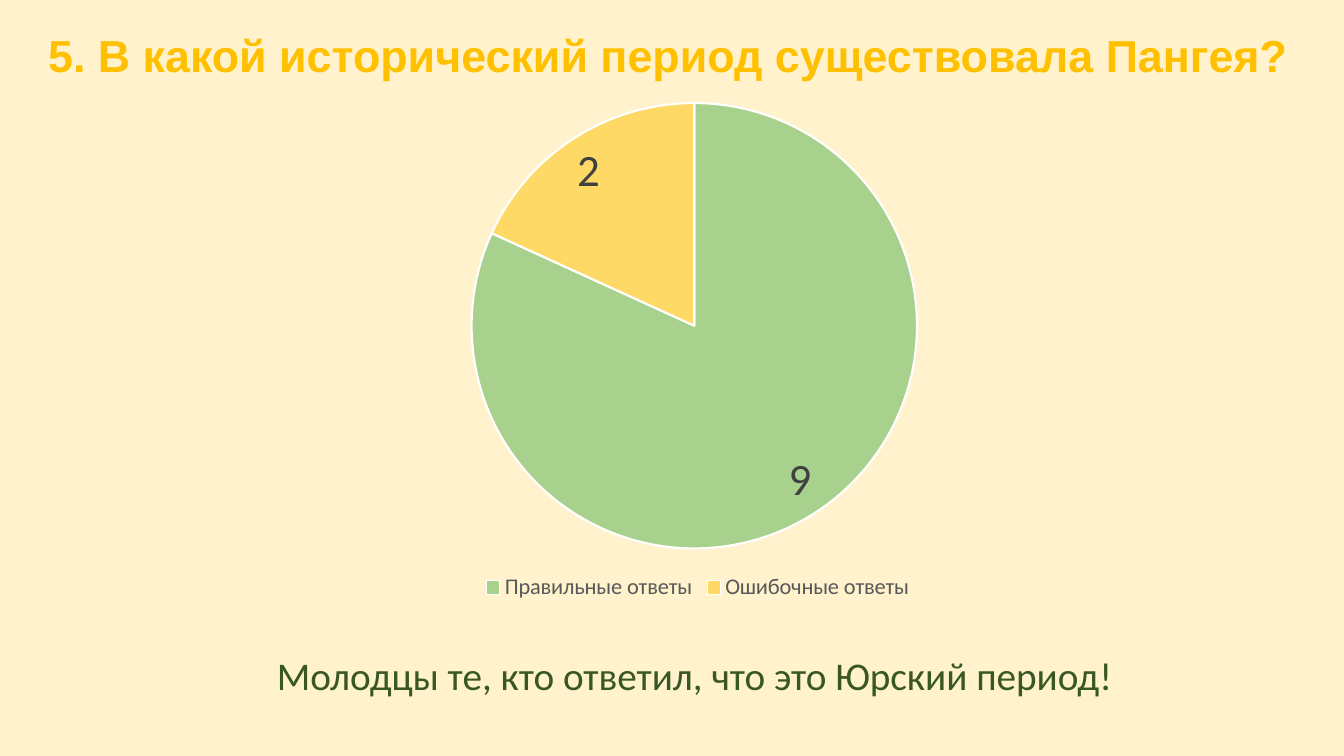
import pptx
import pptx.chart.data
import pptx.dml.color
import pptx.enum.chart
import pptx.enum.text
import pptx.oxml
import pptx.oxml.ns
import pptx.util

Pt = pptx.util.Pt


def color(hex_string):
    return pptx.dml.color.RGBColor.from_string(hex_string)


class Deck:
    BACKGROUND = "FFF2CC"
    TITLE = "FFC000"
    NOTE = "385723"
    LABEL = "404040"
    LEGEND = "595959"
    BORDER = "FFFFFF"
    HEAD_FONT = "Arial"
    BODY_FONT = "Calibri"

    def __init__(self, width, height):
        self.prs = pptx.Presentation()
        self.prs.slide_width, self.prs.slide_height = Pt(width), Pt(height)

    def add_slide(self):
        self.s = self.prs.slides.add_slide(self.prs.slide_layouts[5])
        fill = self.s.background.fill
        fill.solid()
        fill.fore_color.rgb = color(self.BACKGROUND)

    def style(self, font, name, size, hex_string, bold=False):
        font.name, font.size, font.bold = name, Pt(size), bold
        font.color.rgb = color(hex_string)

    def set_text(self, sp, text, *style, wrap=True):
        tf = sp.text_frame
        tf.word_wrap = wrap
        tf.auto_size = pptx.enum.text.MSO_AUTO_SIZE.NONE
        tf.vertical_anchor = pptx.enum.text.MSO_ANCHOR.TOP
        tf.margin_left = tf.margin_right = 0
        p = tf.paragraphs[0]
        p.alignment = pptx.enum.text.PP_ALIGN.CENTER
        r = p.add_run()
        r.text = text
        self.style(r.font, *style)

    def title(self, text, x, y, w, h):
        sp = self.s.shapes.title
        sp.left, sp.top, sp.width, sp.height = Pt(x), Pt(y), Pt(w), Pt(h)
        self.set_text(sp, text, self.HEAD_FONT, 32, self.TITLE, True)

    def note(self, text, x, y, w, h):
        sp = self.s.shapes.add_textbox(Pt(x), Pt(y), Pt(w), Pt(h))
        self.set_text(sp, text, self.BODY_FONT, 28, self.NOTE, wrap=False)

    def pie(self, slices, plot_area, x, y, w, h):
        data = pptx.chart.data.CategoryChartData()
        data.categories = [name for name, _, _ in slices]
        data.add_series("Series 1", [value for _, value, _ in slices])
        chart = self.s.shapes.add_chart(
            pptx.enum.chart.XL_CHART_TYPE.PIE, Pt(x), Pt(y), Pt(w), Pt(h), data).chart
        chart.has_title = False
        self.style(chart.font, self.BODY_FONT, 10, "000000")

        # Slices
        plot = chart.plots[0]
        plot.vary_by_categories = True
        for i, (_, _, fill) in enumerate(slices):
            fmt = plot.series[0].points[i].format
            fmt.fill.solid()
            fmt.fill.fore_color.rgb = color(fill)
            fmt.line.color.rgb = color(self.BORDER)
            fmt.line.width = Pt(1.5)

        # Value labels
        labels = plot.series[0].data_labels
        labels.show_value = True
        labels.show_percentage = False
        labels.show_category_name = False
        labels.show_legend_key = False
        labels.position = pptx.enum.chart.XL_LABEL_POSITION.INSIDE_END
        self.style(labels.font, self.BODY_FONT, 32, self.LABEL)

        # Legend
        chart.has_legend = True
        chart.legend.position = pptx.enum.chart.XL_LEGEND_POSITION.BOTTOM
        chart.legend.include_in_layout = False
        self.style(chart.legend.font, self.BODY_FONT, 16, self.LEGEND)

        # Plot area as fractions of the chart frame
        sizes = "".join(f'<c:{k} val="{v}"/>' for k, v in zip("xywh", plot_area))
        layout = pptx.oxml.parse_xml(
            f'<c:layout {pptx.oxml.ns.nsdecls("c")}><c:manualLayout>'
            '<c:layoutTarget val="inner"/><c:xMode val="edge"/><c:yMode val="edge"/>'
            f'{sizes}</c:manualLayout></c:layout>')
        area = plot._element.getparent()
        for old in area.findall(pptx.oxml.ns.qn("c:layout")):
            area.remove(old)
        area.insert(0, layout)


def main():
    deck = Deck(960, 540)
    deck.add_slide()
    deck.title("5. В какой исторический период существовала Пангея?", 27, 16.5, 901, 46)
    deck.pie([("Правильные ответы", 9, "A9D18E"), ("Ошибочные ответы", 2, "FFD966")],
             (0.18, 0.03, 0.63, 0.86), 246, 62.5, 505, 370)
    deck.note("Молодцы те, кто ответил, что это Юрский период!", 187, 462, 618, 41)
    deck.prs.save("out.pptx")


if __name__ == "__main__":
    main()
